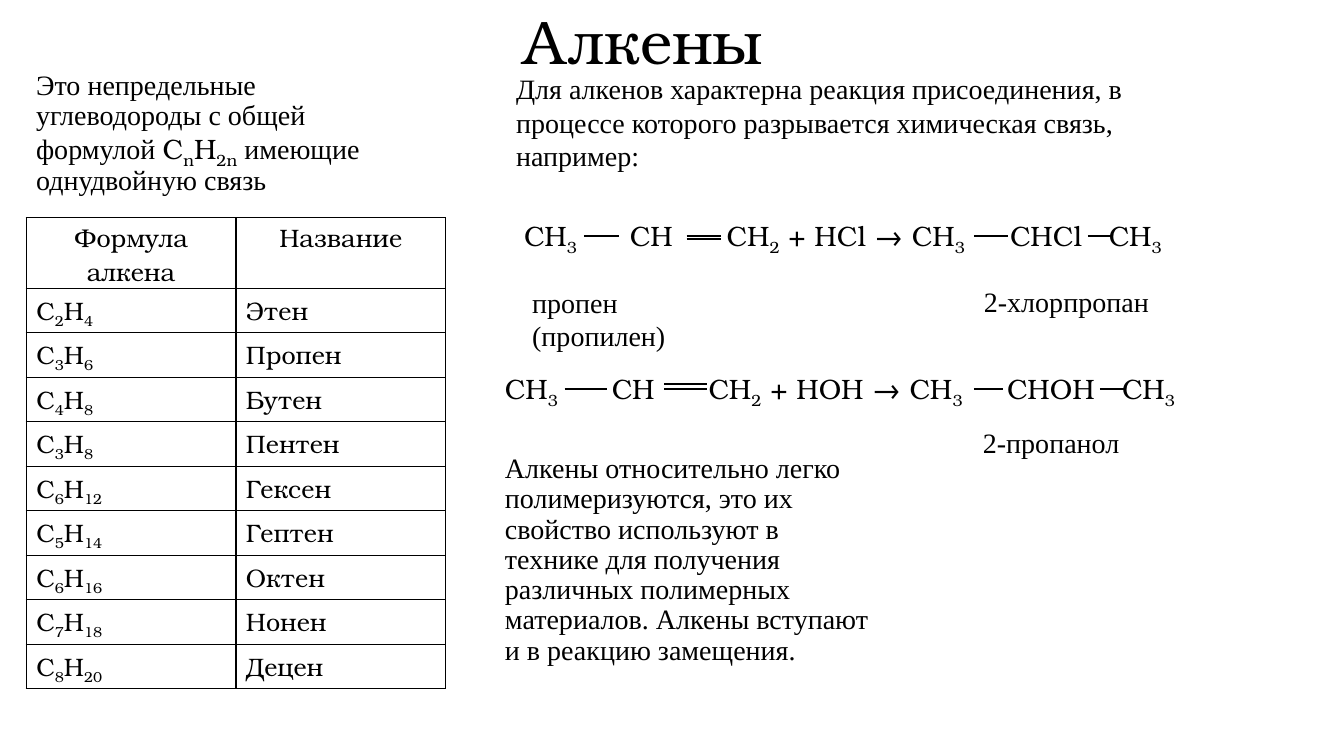
from lxml.etree import SubElement
from pptx import Presentation
from pptx.dml.color import RGBColor
from pptx.enum.shapes import MSO_CONNECTOR
from pptx.enum.text import MSO_ANCHOR as Anchor, PP_ALIGN as Align
from pptx.oxml import parse_xml
from pptx.oxml.ns import nsdecls, qn
from pptx.util import Pt

EMU_PER_PX = 9144  # 100 px to the inch
COLORS = {"ink": "000000", "paper": "FFFFFF"}
SERIF = "Times New Roman"
BOOK = "TeX Gyre Bonum"


def px(length):
    return length * EMU_PER_PX


def color(name):
    return RGBColor.from_string(COLORS[name])


def write(paragraph, text, font=SERIF, size=20, align=Align.LEFT,
          spacing=None, before=0, tabs=()):
    """Fill a paragraph; _x_ is a subscript, ^x^ switches to the book font."""
    paragraph.alignment = align
    paragraph.line_spacing = spacing
    paragraph.space_before = Pt(before)
    if tabs:
        tab_list = SubElement(paragraph._p.get_or_add_pPr(), qn("a:tabLst"))
        for position in tabs:
            SubElement(tab_list, qn("a:tab"), pos=str(px(position)), algn="l")
    for line_number, line in enumerate(text.split("\n")):
        if line_number:
            paragraph.add_line_break()
        for span_number, span in enumerate(line.split("^")):
            for part_number, part in enumerate(span.split("_")):
                if not part:
                    continue
                run = paragraph.add_run()
                run.text = part
                run.font.name = BOOK if span_number % 2 else font
                run.font.size = Pt(size)
                run.font.color.rgb = color("ink")
                if part_number % 2:
                    run._r.get_or_add_rPr().set("baseline", "-25000")


class SlideBuilder:
    def __init__(self, slide, line_width=1):
        self.slide = slide
        self.line_width = Pt(line_width)

    def text(self, left, top, width, height, text, anchor=Anchor.TOP, **style):
        box = self.slide.shapes.add_textbox(px(left), px(top), px(width), px(height))
        frame = box.text_frame
        frame.word_wrap = True
        frame.vertical_anchor = anchor
        write(frame.paragraphs[0], text, **style)

    def bond(self, start, end, *levels):
        """Draw one horizontal line from start to end at each level."""
        for y in levels:
            line = self.slide.shapes.add_connector(
                MSO_CONNECTOR.STRAIGHT, px(start), px(y), px(end), px(y))
            line.line.color.rgb = color("ink")
            line.line.width = self.line_width
            SubElement(line._element.spPr, qn("a:effectLst"))

    def borders(self, cell):
        properties = cell._tc.get_or_add_tcPr()
        for index, side in enumerate("LRTB"):
            properties.insert(index, parse_xml(
                f'<a:ln{side} {nsdecls("a")} w="{self.line_width}"><a:solidFill>'
                f'<a:srgbClr val="{COLORS["ink"]}"/></a:solidFill></a:ln{side}>'))

    def table(self, left, top, column_width, header_height, row_height, rows):
        columns = len(rows[0])
        height = header_height + row_height * (len(rows) - 1)
        table = self.slide.shapes.add_table(
            len(rows), columns, px(left), px(top),
            px(column_width * columns), px(height)).table
        table.first_row = table.horz_banding = False
        for column in table.columns:
            column.width = px(column_width)
        for row_number, values in enumerate(rows):
            is_header = row_number == 0
            table.rows[row_number].height = px(header_height if is_header else row_height)
            for column_number, value in enumerate(values):
                cell = table.cell(row_number, column_number)
                cell.fill.solid()
                cell.fill.fore_color.rgb = color("paper")
                self.borders(cell)
                if is_header:
                    cell.margin_top, cell.margin_bottom = px(3), 0
                write(cell.text_frame.paragraphs[0], value, font=BOOK, size=18,
                      align=Align.CENTER if is_header else Align.LEFT)


ALKENES = [
    ("Формула алкена", "Название"),
    ("C_2_H_4_", "Этен"),
    ("C_3_H_6_", "Пропен"),
    ("C_4_H_8_", "Бутен"),
    ("C_3_H_8_", "Пентен"),
    ("C_6_H_12_", "Гексен"),
    ("C_5_H_14_", "Гептен"),
    ("C_6_H_16_", "Октен"),
    ("C_7_H_18_", "Нонен"),
    ("C_8_H_20_", "Децен"),
]

# left, top, width, reagent, product group, tab stops, bonds (start, end, levels)
REACTIONS = [
    (510, 212, 667, "HCl", "CHCl", (105, 201, 482, 580),
     [(579, 614, 234), (681, 715, 234, 237), (966, 1000, 234), (1079, 1103, 234)]),
    (491, 364, 695, "HOH", "CHOH", (106, 202, 498, 612),
     [(560, 602, 386), (659, 701, 381, 386), (966, 995, 386), (1091, 1115, 386)]),
]


def main():
    presentation = Presentation()
    presentation.slide_width, presentation.slide_height = px(1333), px(750)
    slide = presentation.slides.add_slide(presentation.slide_layouts[6])
    builder = SlideBuilder(slide)

    builder.text(509, 0, 278, 89, "Алкены", anchor=Anchor.MIDDLE,
                 font=BOOK, size=44, spacing=0.9)
    builder.text(26, 66, 387, 137,
                 "Это непредельные углеводороды с общей формулой ^C_n_H_2n_^"
                 " имеющие однудвойную связь", spacing=0.9, before=10)
    builder.text(502, 66, 667, 111,
                 "Для алкенов характерна реакция присоединения, в процессе которого "
                 "разрывается химическая связь, например:")

    for left, top, width, reagent, group, tabs, bonds in REACTIONS:
        builder.text(left, top, width, 44,
                     f"CH_3_\tCH\tCH_2_ + {reagent} → CH_3_\t{group}\tCH_3_",
                     font=BOOK, tabs=tabs)
        for bond in bonds:
            builder.bond(*bond)

    builder.text(518, 278, 157, 77, "пропен\n(пропилен)")
    builder.text(966, 277, 203, 44, "2-хлорпропан")
    builder.text(965, 417, 203, 44, "2-пропанол")
    builder.text(491, 446, 388, 246,
                 "Алкены относительно легко полимеризуются, это их свойство используют "
                 "в технике для получения различных полимерных материалов. "
                 "Алкены вступают и в реакцию замещения.", spacing=0.9, before=10)
    builder.table(26, 216, 208, 70, 44, ALKENES)

    presentation.save("out.pptx")


if __name__ == "__main__":
    main()
